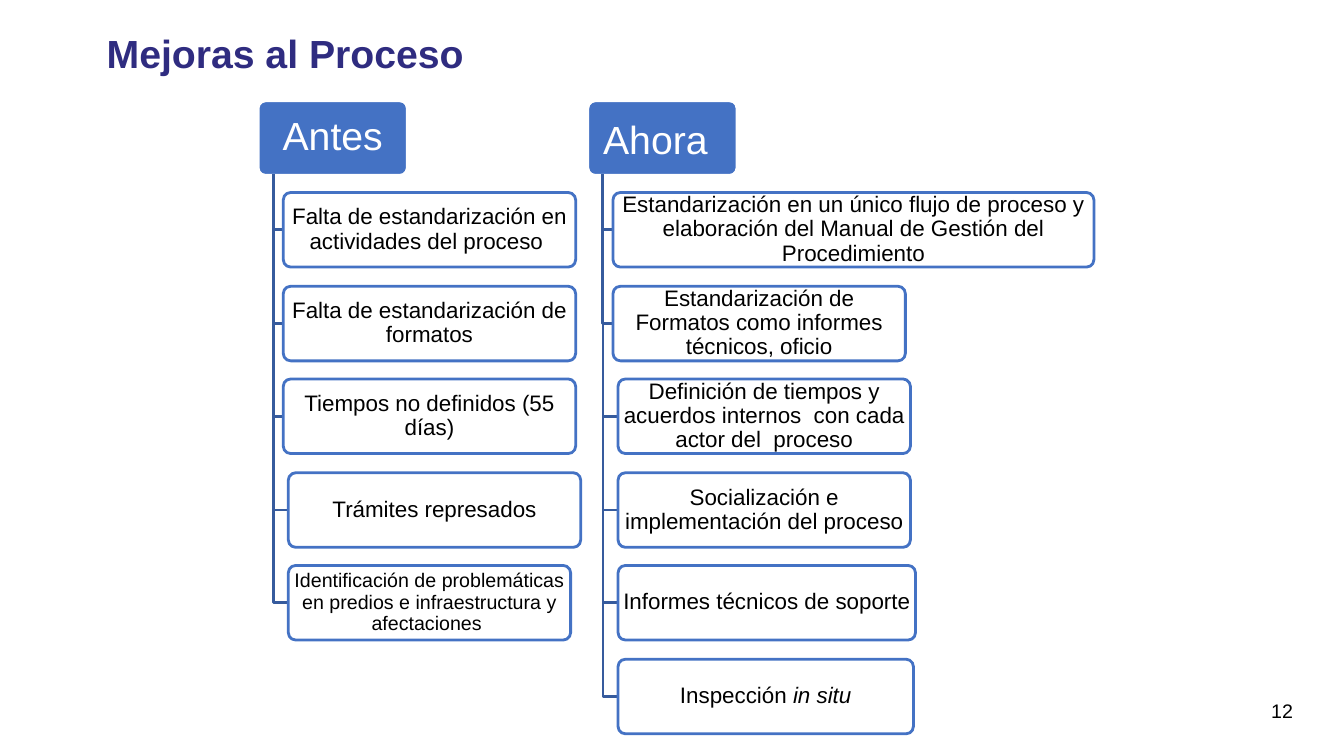
from pptx import Presentation
from pptx.dml.color import RGBColor
from pptx.enum.shapes import MSO_SHAPE as Shape
from pptx.enum.text import MSO_ANCHOR as Anchor, PP_ALIGN as Align
from pptx.util import Emu, Pt

PX = 9144
FONT = "Arial"
NAVY = RGBColor(0x2F, 0x2C, 0x80)
BLUE = RGBColor(0x44, 0x72, 0xC4)
DARK_BLUE = RGBColor(0x36, 0x5B, 0x9D)
WHITE = RGBColor(0xFF, 0xFF, 0xFF)
BLACK = RGBColor(0, 0, 0)

HEADER_TOP, HEADER_WIDTH, BOX_HEIGHT = 100, 148, 74
FIRST_ROW_TOP, TWO_ROW_PITCH = 191, 185
SPINE_TOP, SPINE_OFFSET = 173, 15
# Left offsets of the boxes from their header
NEAR, FAR = 25, 30

# Each item: text, left offset, width, font size
BEFORE = [
    ("Falta de estandarización en actividades del proceso ", NEAR, 290, 16),
    ("Falta de estandarización de formatos", NEAR, 290, 16),
    ("Tiempos no definidos (55 días)", NEAR, 290, 16),
    ("Trámites represados", FAR, 290, 16),
    ("Identificación de problemáticas en predios e infraestructura y afectaciones ",
     FAR, 280, 14),
]
NOW = [
    ("Estandarización en un único flujo de proceso y elaboración del Manual "
     "de Gestión del Procedimiento", NEAR, 477, 16),
    ("Estandarización de Formatos como informes técnicos, oficio", NEAR, 290, 16),
    ("Definición de tiempos y acuerdos internos  con cada actor del  proceso",
     FAR, 290, 16),
    ("Socialización e implementación del proceso ", FAR, 290, 16),
    ("Informes técnicos de soporte", FAR, 295, 16),
    ("Inspección ", FAR, 293, 16),
]


def px(*lengths):
    return [Emu(length * PX) for length in lengths]


def set_font(paragraph, size, color, bold=False):
    font = paragraph.font
    font.name, font.size, font.bold = FONT, Pt(size), bold
    font.color.rgb = color


def add_label(slide, text, bounds, size, color, bold=False):
    frame = slide.shapes.add_textbox(*px(*bounds)).text_frame
    frame.word_wrap = True
    paragraph = frame.paragraphs[0]
    paragraph.text = text
    set_font(paragraph, size, color, bold)
    return frame


def add_box(slide, text, bounds, size, fill, outline, color, margins):
    box = slide.shapes.add_shape(Shape.ROUNDED_RECTANGLE, *px(*bounds))
    box.adjustments[0] = 0.1
    box.shadow.inherit = False
    box.fill.solid()
    box.fill.fore_color.rgb = fill
    box.line.color.rgb = outline
    box.line.width = Pt(2)
    frame = box.text_frame
    frame.word_wrap = True
    frame.vertical_anchor = Anchor.MIDDLE
    frame.margin_left = frame.margin_right = Emu(margins[0] * PX)
    frame.margin_top = frame.margin_bottom = Emu(margins[1] * PX)
    paragraph = frame.paragraphs[0]
    paragraph.text = text
    paragraph.alignment = Align.CENTER
    paragraph.line_spacing = 0.9
    set_font(paragraph, size, color)
    return box


def add_elbow(slide, spine, middle, box_left):
    """Draw down the spine and across to the side of a box."""
    outline = slide.shapes.build_freeform(spine, SPINE_TOP, scale=PX)
    outline.add_line_segments([(spine, middle), (box_left, middle)], close=False)
    elbow = outline.convert_to_shape()
    elbow.shadow.inherit = False
    elbow.fill.background()
    elbow.line.color.rgb = DARK_BLUE
    elbow.line.width = Pt(2)


def add_column(slide, heading, left, items):
    """Add a heading with its boxes hanging from a spine; return all the boxes."""
    header = add_box(slide, heading, (left, HEADER_TOP, HEADER_WIDTH, BOX_HEIGHT),
                     28, BLUE, WHITE, WHITE, (6, 4))
    boxes = [header]
    for row, (text, offset, width, size) in enumerate(items):
        top = FIRST_ROW_TOP + (row * TWO_ROW_PITCH + 1) // 2
        box_left = left + offset
        add_elbow(slide, left + SPINE_OFFSET, top + BOX_HEIGHT // 2, box_left)
        boxes.append(add_box(slide, text, (box_left, top, width, BOX_HEIGHT),
                             size, WHITE, BLUE, BLACK, (3, 2)))
    return boxes


def main():
    deck = Presentation()
    deck.slide_width, deck.slide_height = px(1333, 750)
    slide = deck.slides.add_slide(deck.slide_layouts[6])

    title = add_label(slide, "Mejoras al Proceso", (96, 11, 1053, 88), 28, NAVY, True)
    title.vertical_anchor = Anchor.MIDDLE
    title.paragraphs[0].line_spacing = 0.9
    add_label(slide, "12", (1251, 688, 79, 40), 14, BLACK)

    add_column(slide, "Antes", 256, BEFORE)
    now_boxes = add_column(slide, "Ahora", 583, NOW)

    heading_space = now_boxes[0].text_frame.paragraphs[0].add_run()
    heading_space.text = " "
    heading_space.font.size = Pt(36)
    on_site = now_boxes[-1].text_frame.paragraphs[0].add_run()
    on_site.text = "in situ"
    on_site.font.italic = True

    deck.save("out.pptx")


if __name__ == "__main__":
    main()
